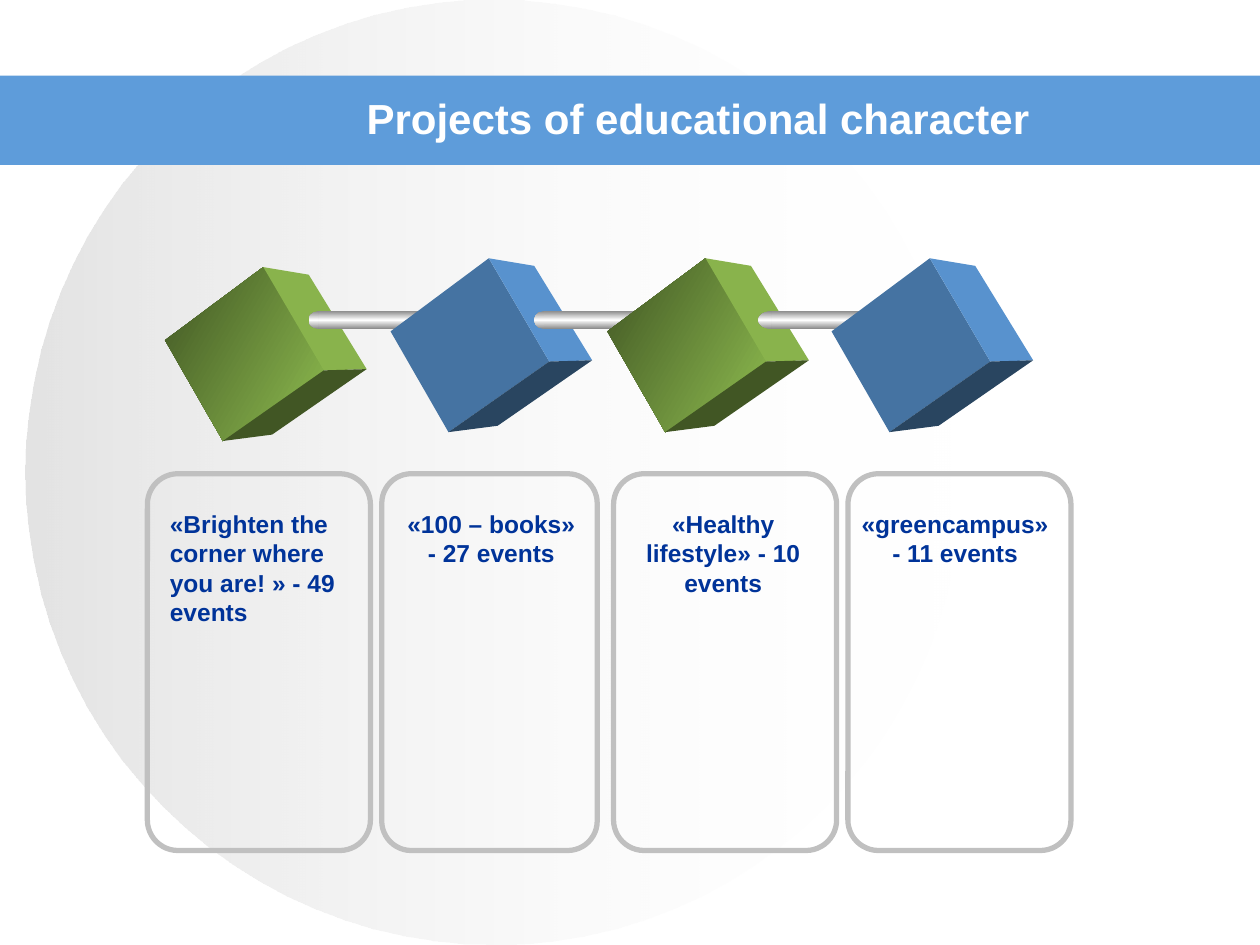
from pptx import Presentation
from pptx.dml.color import RGBColor
from pptx.enum.shapes import MSO_SHAPE as Shape
from pptx.enum.text import MSO_ANCHOR as Anchor, MSO_AUTO_SIZE as AutoSize, PP_ALIGN as Align
from pptx.oxml import parse_xml
from pptx.oxml.ns import nsdecls
from pptx.util import Inches, Pt

WHITE = RGBColor(0xFF, 0xFF, 0xFF)
SILVER = RGBColor(0xC0, 0xC0, 0xC0)
STEEL = RGBColor(0x8C, 0x8C, 0x8C)
BAND_BLUE = RGBColor(0x5E, 0x9C, 0xDA)
NAVY = RGBColor(0x00, 0x33, 0x99)
GREEN_DARK = RGBColor(0x41, 0x56, 0x24)
GREEN_LIGHT = RGBColor(0x8E, 0xBC, 0x4F)
GREEN_SIDE = RGBColor(0x89, 0xB3, 0x4C)
BLUE_FRONT = RGBColor(0x45, 0x73, 0xA2)
BLUE_SIDE = RGBColor(0x58, 0x92, 0xCE)
BLUE_DARK = RGBColor(0x29, 0x45, 0x60)

# Gradients: clockwise angle and (position %, colour, opacity %) stops
CIRCLE_FADE = (0, [(0, SILVER, 44), (100, WHITE, 0)])
METAL = (90, [(0, STEEL, 100), (50, WHITE, 100), (100, STEEL, 100)])
GREEN_FADE = (30, [(0, GREEN_DARK, 100), (100, GREEN_LIGHT, 100)])

# Front, side and underside of each cube
GREEN_CUBE = (GREEN_FADE, GREEN_SIDE, GREEN_DARK)
BLUE_CUBE = (BLUE_FRONT, BLUE_SIDE, BLUE_DARK)
CUBE_FACES = [
    [(0.78, 0), (1.26, 0.82), (0.46, 1.38), (0, 0.58)],
    [(0.78, 0), (1.14, 0.06), (1.6, 0.81), (1.26, 0.82)],
    [(1.26, 0.82), (1.6, 0.81), (0.85, 1.33), (0.46, 1.38)],
]

TITLE_FONT = {"name": "Arial", "size": Pt(24), "bold": True}
LABEL_FONT = {"name": "Arial", "size": Pt(14), "bold": True}

# Cube: left, top, colours
CUBES = [(1.31, 2.12, GREEN_CUBE), (3.1, 2.05, BLUE_CUBE),
         (4.82, 2.05, GREEN_CUBE), (6.6, 2.05, BLUE_CUBE)]
# Rod to the next cube: left, width
RODS = [(2.45, 0.97), (4.24, 0.97), (6.02, 1.27)]
# Panel: left, width; label: left, width, height, alignment, text
PROJECTS = [
    ((1.17, 1.77), (1.25, 1.56, 1.04, Align.LEFT,
                    "«Brighten the corner where you are! » - 49 events")),
    ((3.03, 1.71), (3.12, 1.56, 0.57, Align.CENTER, "«100 – books» - 27 events")),
    ((4.87, 1.77), (4.92, 1.64, 0.81, Align.CENTER, "«Healthy lifestyle» - 10 events")),
    ((6.73, 1.77), (6.72, 1.72, 0.57, Align.CENTER, "«greencampus» - 11 events")),
]


def set_gradient(shape, angle, stops):
    stop_xml = "".join(
        f'<a:gs pos="{pos * 1000}"><a:srgbClr val="{color}">'
        f'<a:alpha val="{opacity * 1000}"/></a:srgbClr></a:gs>'
        for pos, color, opacity in stops)
    gradient = parse_xml(
        f'<a:gradFill {nsdecls("a")} rotWithShape="1"><a:gsLst>{stop_xml}</a:gsLst>'
        f'<a:lin ang="{angle * 60000}" scaled="0"/></a:gradFill>')
    shape.fill.background()
    properties = shape._element.spPr
    properties.replace(properties.find("{*}noFill"), gradient)


def paint(shape, fill):
    """Fill with a colour or a gradient, without outline or shadow."""
    shape.shadow.inherit = False
    shape.line.fill.background()
    if isinstance(fill, RGBColor):
        shape.fill.solid()
        shape.fill.fore_color.rgb = fill
    else:
        set_gradient(shape, *fill)


def add_painted(slide, kind, box, fill):
    shape = slide.shapes.add_shape(kind, *map(Inches, box))
    paint(shape, fill)
    return shape


def write_text(frame, text, alignment, font_values, color):
    frame.word_wrap = True
    paragraph = frame.paragraphs[0]
    paragraph.alignment = alignment
    run = paragraph.add_run()
    run.text = text
    for key, value in font_values.items():
        setattr(run.font, key, value)
    run.font.color.rgb = color


def add_backdrop(slide):
    add_painted(slide, Shape.OVAL, (0.2, 0, 7.44, 7.5), CIRCLE_FADE)
    add_painted(slide, Shape.RECTANGLE, (0, 0.6, 10, 0.71), BAND_BLUE)


def place_title(slide, left, top, width, height):
    title = slide.shapes.title
    title.left, title.top = Inches(left), Inches(top)
    title.width, title.height = Inches(width), Inches(height)
    title.text_frame.vertical_anchor = Anchor.MIDDLE
    write_text(title.text_frame, "Projects of educational character",
               Align.CENTER, TITLE_FONT, WHITE)
    slide.shapes._spTree.append(title._element)  # in front of the band


def add_cube(slide, left, top, colors):
    for points, fill in zip(CUBE_FACES, colors):
        corners = [(Inches(left + x), Inches(top + y)) for x, y in points]
        builder = slide.shapes.build_freeform(*corners[0])
        builder.add_line_segments(corners[1:], close=True)
        paint(builder.convert_to_shape(), fill)


def add_rod(slide, left, top, width, height):
    cap = 0.16 * width
    for kind, x, part_width in [
        (Shape.OVAL, left, cap),
        (Shape.RECTANGLE, left + cap / 2, width - cap),
        (Shape.OVAL, left + width - cap, cap),
    ]:
        add_painted(slide, kind, (x, top, part_width, height), METAL)


def add_chain(slide):
    # Each rod starts on one cube and runs behind the next
    for index, cube in enumerate(CUBES):
        if index:
            left, width = RODS[index - 1]
            add_rod(slide, left, 2.47, width, 0.14)
        add_cube(slide, *cube)


def add_panel(slide, left, top, width, height):
    panel = slide.shapes.add_shape(
        Shape.ROUNDED_RECTANGLE, *map(Inches, (left, top, width, height)))
    panel.adjustments[0] = 0.137
    panel.shadow.inherit = False
    panel.fill.background()
    panel.line.color.rgb = SILVER
    panel.line.width = Pt(3)


def add_label(slide, left, top, width, height, alignment, text):
    label = slide.shapes.add_textbox(*map(Inches, (left, top, width, height)))
    write_text(label.text_frame, text, alignment, LABEL_FONT, NAVY)
    label.text_frame.auto_size = AutoSize.SHAPE_TO_FIT_TEXT


def main():
    deck = Presentation()
    deck.slide_width, deck.slide_height = Inches(10), Inches(7.5)
    slide = deck.slides.add_slide(deck.slide_layouts[5])
    add_backdrop(slide)
    place_title(slide, 2.25, 0.67, 6.58, 0.53)
    add_chain(slide)
    for (panel_left, panel_width), (left, width, height, alignment, text) in PROJECTS:
        add_panel(slide, panel_left, 3.76, panel_width, 2.99)
        add_label(slide, left, 3.99, width, height, alignment, text)
    deck.save("out.pptx")


if __name__ == "__main__":
    main()
